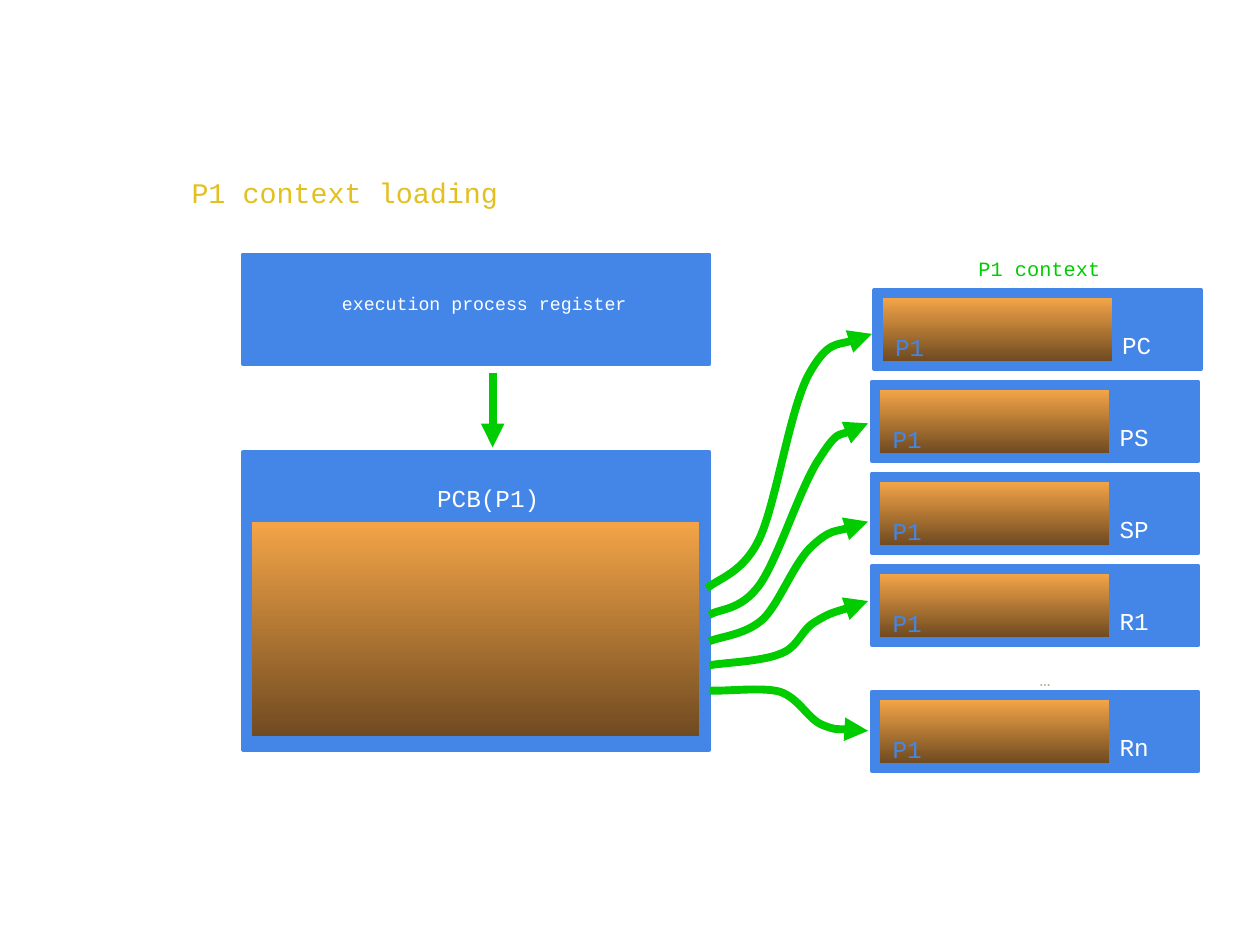
from lxml.etree import SubElement
from pptx import Presentation
from pptx.dml.color import RGBColor
from pptx.enum.shapes import MSO_CONNECTOR, MSO_SHAPE
from pptx.enum.text import MSO_ANCHOR, MSO_AUTO_SIZE, PP_ALIGN
from pptx.oxml.ns import qn
from pptx.util import Inches, Pt

BLUE = RGBColor(0x44, 0x86, 0xE8)
GREEN = RGBColor(0x00, 0xCC, 0x00)
YELLOW = RGBColor(0xE4, 0xBF, 0x20)
SAGE = RGBColor(0xA5, 0xB5, 0x92)
WHITE = RGBColor(0xFF, 0xFF, 0xFF)
ORANGE = RGBColor(0xF3, 0xA4, 0x47)
BROWN = RGBColor(0x70, 0x4B, 0x21)
FONT = "Courier New"

# The slide is a grid of 100 columns by 75 rows
COLUMNS, ROWS = 100, 75
CELL = Inches(0.1)
REGISTER_PITCH = 7.3
REGISTER_LEFT, REGISTER_TOP = 69.2, 23
REGISTER_SIZE = (25.9, 6.3)

# Name, shift to the right, rows of extra gap above
REGISTERS = [("PC", 0.2, 0), ("PS", 0, 0), ("SP", 0, 0), ("R1", 0, 0), ("Rn", 0, 2.7)]

# Bézier points from the PCB to each register
CURVES = [
    [(56.1, 46.7), (57, 45.9), (59, 45.5), (60.3, 42.7), (61.6, 39.9),
     (62.7, 32.4), (64.2, 29.7), (65.7, 27), (68.4, 27), (69.2, 26.5)],
    [(56.3, 48.8), (57.1, 48.3), (58.8, 48.5), (60.3, 46.4), (61.8, 44.3),
     (63.6, 38.4), (65.1, 36.3), (66.5, 34.1), (68.3, 34), (68.9, 33.6)],
    [(56.3, 50.9), (57.2, 50.5), (59.2, 50.4), (60.6, 49.1), (61.9, 47.8),
     (63.1, 44.5), (64.5, 43.3), (65.9, 42), (68.2, 41.8), (68.9, 41.4)],
    [(56.3, 52.8), (57.4, 52.6), (60.5, 52.5), (61.9, 51.9), (63.4, 51.4),
     (63.6, 49.9), (64.8, 49.3), (65.9, 48.6), (68.2, 48), (68.9, 47.7)],
    [(56.3, 54.8), (57.5, 54.9), (60.5, 54.5), (61.9, 54.9), (63.4, 55.4),
     (64.1, 57), (65.2, 57.5), (66.4, 58), (68.3, 57.9), (68.9, 58)],
]


def grid(*cells):
    return [round(cell * CELL) for cell in cells]


def write_text(shape, text, size, color, align=PP_ALIGN.LEFT, side_inset=0.1,
               indent=0, spaced=True):
    frame = shape.text_frame
    frame.word_wrap = True
    frame.auto_size = MSO_AUTO_SIZE.SHAPE_TO_FIT_TEXT
    frame.vertical_anchor = MSO_ANCHOR.TOP
    frame.margin_left = frame.margin_right = Inches(side_inset)
    frame.margin_top = frame.margin_bottom = Inches(0.05)
    paragraph = frame.paragraphs[0]
    paragraph.alignment = align
    properties = paragraph._p.get_or_add_pPr()
    properties.set("marL", str(Inches(indent)))
    properties.set("indent", "0")
    if spaced:
        spacing = SubElement(properties, qn("a:spcBef"))
        SubElement(spacing, qn("a:spcPct")).set("val", "50000")
    run = paragraph.add_run()
    run.text = text
    run.font.name = FONT
    run.font.size = Pt(size)
    run.font.color.rgb = color
    run._r.get_or_add_rPr().set("baseline", "-25000")


def add_label(slide, box, text, size, color, **text_format):
    write_text(slide.shapes.add_textbox(*grid(*box)), text, size, color, **text_format)


def add_caption(slide, box, text, size, color, align=PP_ALIGN.CENTER):
    add_label(slide, box, text, size, color, align=align, side_inset=0.02, indent=0.21)


def add_blue_box(slide, box):
    shape = slide.shapes.add_shape(MSO_SHAPE.RECTANGLE, *grid(*box))
    shape.shadow.inherit = False
    shape.fill.solid()
    shape.fill.fore_color.rgb = BLUE
    shape.line.color.rgb = BLUE
    shape.line.width = Pt(2.25)


def add_content_box(slide, box):
    shape = slide.shapes.add_shape(MSO_SHAPE.RECTANGLE, *grid(*box))
    shape.shadow.inherit = False
    shape.fill.gradient()
    shape.fill.gradient_angle = 270
    for stop, color in zip(shape.fill.gradient_stops, (ORANGE, BROWN)):
        stop.color.rgb = color
    shape.line.fill.background()
    return shape


def format_arrow(shape):
    shape.line.color.rgb = GREEN
    shape.line.width = Pt(4.5)
    SubElement(shape.line._get_or_add_ln(), qn("a:tailEnd")).set("type", "triangle")


def add_straight_arrow(slide, start, end):
    arrow = slide.shapes.add_connector(MSO_CONNECTOR.STRAIGHT, *grid(*start, *end))
    format_arrow(arrow)
    SubElement(arrow._element.spPr, qn("a:effectLst"))


def add_curved_arrow(slide, points):
    start, *others = [grid(*point) for point in points]
    builder = slide.shapes.build_freeform(*start)
    builder.add_line_segments(others, close=False)
    arrow = builder.convert_to_shape()
    # Join every three line points into one cubic curve
    path = arrow._element.find(".//" + qn("a:path"))
    segments = path.findall(qn("a:lnTo"))
    for first in range(0, len(segments), 3):
        curve = SubElement(path, qn("a:cubicBezTo"))
        for segment in segments[first:first + 3]:
            curve.append(segment[0])
            path.remove(segment)
    arrow.fill.background()
    format_arrow(arrow)
    arrow.shadow.inherit = False


def add_title(slide, box):
    title = slide.shapes.title
    title.left, title.top, title.width, title.height = grid(*box)
    write_text(title, "P1 context loading", 28, YELLOW, spaced=False)


def add_execution_register(slide, box):
    left, top, width, height = box
    add_blue_box(slide, box)
    add_caption(slide, (left, top + 0.8, width - 0.8, height - 1.7),
                "execution process register", 18, WHITE)


def add_control_block(slide, box):
    left, top, width, height = box
    add_blue_box(slide, box)
    add_caption(slide, (left - 0.2, top - 0.3, width + 0.2, 5), "PCB(P1)", 24, WHITE)
    add_content_box(slide, (left + 0.7, top + 5.5, width - 1.5, height - 6.6))


def add_register(slide, box, name):
    left, top, width, height = box
    add_blue_box(slide, box)
    add_caption(slide, (left + 17.35, top + 0.5, 7.9, 5), name, 24, WHITE,
                align=PP_ALIGN.LEFT)
    content = add_content_box(slide, (left + 0.65, top + 0.65, width - 7.7, height - 1.3))
    write_text(content, "P1", 24, BLUE)


def add_context(slide):
    add_label(slide, (69.3, 18, 26.4, 4.3), "P1 context", 20, GREEN,
              align=PP_ALIGN.CENTER, spaced=False)
    for row, (name, shift, gap) in enumerate(REGISTERS):
        top = REGISTER_TOP + row * REGISTER_PITCH + gap
        add_register(slide, (REGISTER_LEFT + shift, top, *REGISTER_SIZE), name)
    add_caption(slide, (68.9, 50.9, 26, 3.7), "…", 18, SAGE)


def main():
    presentation = Presentation()
    presentation.slide_width, presentation.slide_height = grid(COLUMNS, ROWS)
    slide = presentation.slides.add_slide(presentation.slide_layouts[5])
    add_title(slide, (14.2, 10.8, 78.3, 5.7))
    # Process side
    add_execution_register(slide, (19.3, 20.2, 37, 8.7))
    add_control_block(slide, (19.3, 35.9, 37, 23.6))
    add_straight_arrow(slide, (39.1, 29.6), (39.1, 35.5))
    # Register side
    add_context(slide)
    for points in CURVES:
        add_curved_arrow(slide, points)
    presentation.save("out.pptx")


if __name__ == "__main__":
    main()
